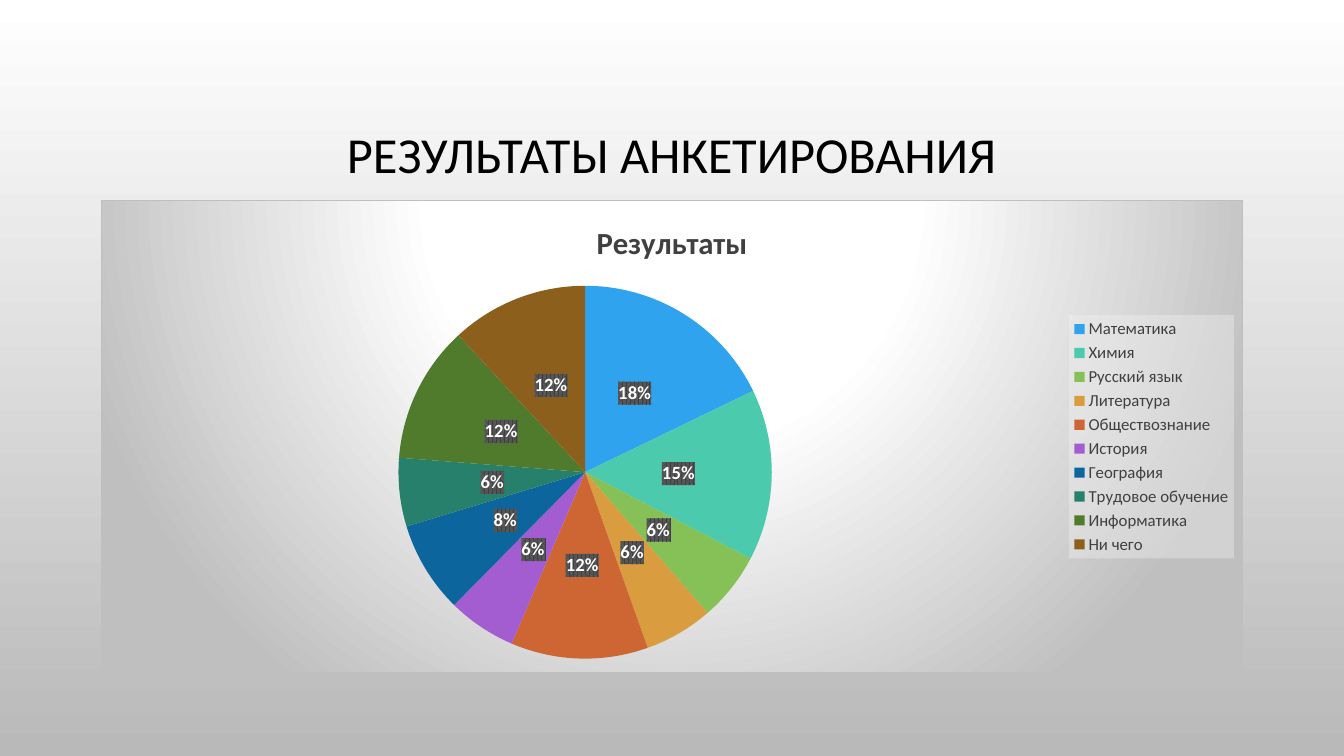
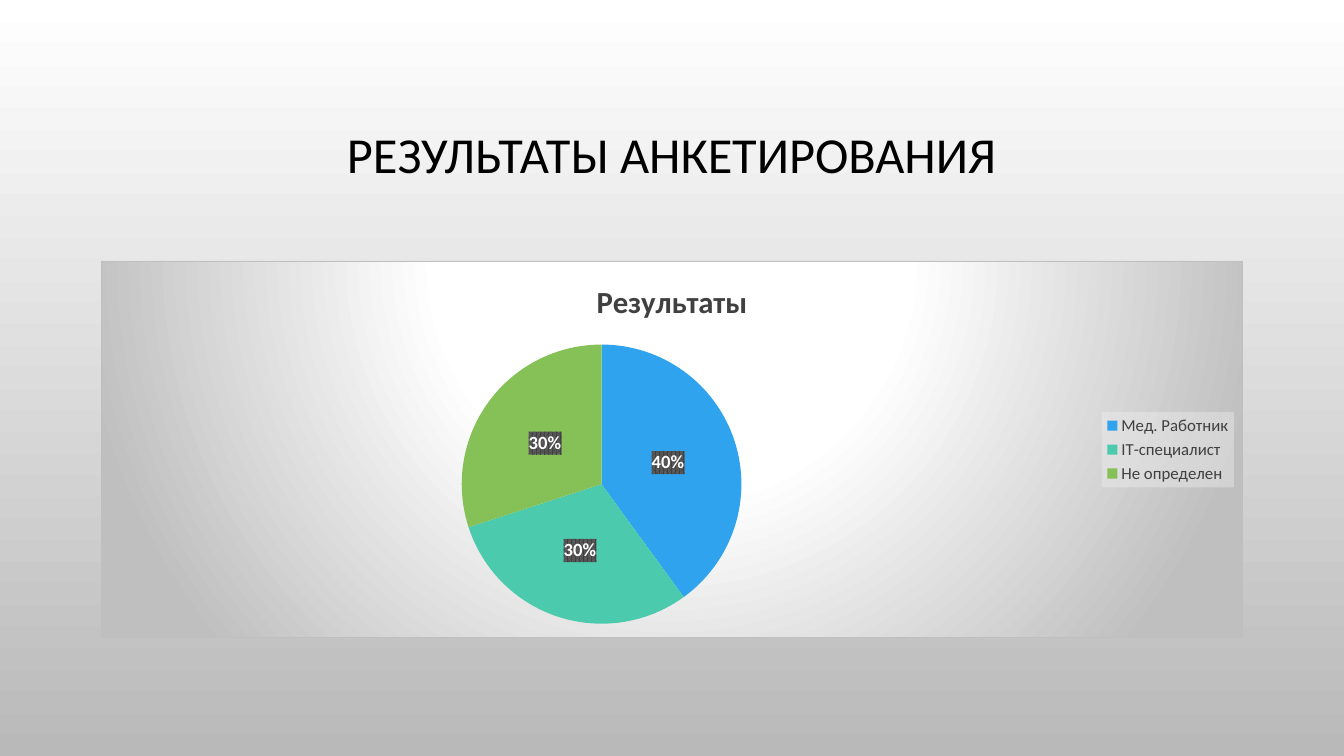
from pptx import Presentation
from pptx.chart.data import CategoryChartData
from pptx.dml.color import RGBColor
from pptx.enum.chart import XL_CHART_TYPE, XL_LABEL_POSITION, XL_LEGEND_POSITION
from pptx.enum.text import MSO_ANCHOR, PP_ALIGN
from pptx.oxml import parse_xml
from pptx.oxml.ns import nsdecls, qn
from pptx.util import Cm, Pt

PIE = XL_CHART_TYPE.PIE
LABEL_CENTER = XL_LABEL_POSITION.CENTER
LEGEND_RIGHT = XL_LEGEND_POSITION.RIGHT
MIDDLE = MSO_ANCHOR.MIDDLE
CENTER = PP_ALIGN.CENTER

# Shared style
FONT = "Calibri"
BLACK, WHITE, DARK_GREY = "000000", "FFFFFF", "404040"
BACKGROUND_END = "B9B9B9"
SLICE_COLORS = ["2FA3EE", "4BCAAD", "86C157", "D99C3F", "CE6633",
                "A35DD1", "0D659E", "26806C", "507B2D", "8C601C"]
LEFT, WIDTH = 2.54, 28.78
TITLE_TOP, TITLE_HEIGHT = 1.73, 4.45

FORMATS = {
    "title": {"size": Pt(36), "color": BLACK},
    "chart": {"size": Pt(10), "color": BLACK},
    "chart_title": {"size": Pt(22), "color": DARK_GREY, "bold": True},
    "legend": {"size": Pt(12), "color": DARK_GREY},
    "label": {"size": Pt(13.3), "color": WHITE, "bold": True},
}

# Fills of the chart parts
PANEL_FILL = """
<a:gradFill><a:gsLst>
  <a:gs pos="0"><a:srgbClr val="FFFFFF"/></a:gs>
  <a:gs pos="39000"><a:srgbClr val="FFFFFF"/></a:gs>
  <a:gs pos="100000"><a:srgbClr val="BFBFBF"/></a:gs>
</a:gsLst><a:path path="circle">
  <a:fillToRect l="50000" t="-80000" r="50000" b="180000"/>
</a:path></a:gradFill>
<a:ln w="9525"><a:solidFill><a:srgbClr val="BFBFBF"/></a:solidFill></a:ln>"""
LEGEND_FILL = """
<a:solidFill><a:srgbClr val="F2F2F2"><a:alpha val="39000"/></a:srgbClr></a:solidFill>
<a:ln><a:noFill/></a:ln>"""
LABEL_FILL = """
<a:pattFill prst="pct75">
  <a:fgClr><a:srgbClr val="404040"/></a:fgClr>
  <a:bgClr><a:srgbClr val="595959"/></a:bgClr>
</a:pattFill><a:ln><a:noFill/></a:ln>"""


def rgb(color):
    return RGBColor.from_string(color)


def set_font(font, style):
    font.name = FONT
    for name, value in FORMATS[style].items():
        if name == "color":
            font.color.rgb = rgb(value)
        else:
            setattr(font, name, value)


def fill_chart_part(part, fill):
    """Put shape properties right before the text properties of a chart part."""
    properties = parse_xml(f'<c:spPr {nsdecls("c", "a")}>{fill}</c:spPr>')
    part.find(qn("c:txPr")).addprevious(properties)


class Deck:
    def __init__(self):
        self.presentation = Presentation()
        self.presentation.slide_width = Cm(33.87)
        self.presentation.slide_height = Cm(19.05)
        self.slide = None

    def add_slide(self, title):
        self.slide = self.presentation.slides.add_slide(
            self.presentation.slide_layouts[6])
        fill = self.slide.background.fill
        fill.gradient()
        fill.gradient_angle = 270
        for stop, position, color in zip(
                fill.gradient_stops, (0, 1), (WHITE, BACKGROUND_END)):
            stop.position = position
            stop.color.rgb = rgb(color)
        self.add_title(title)

    def add_title(self, text):
        shape = self.slide.shapes.add_textbox(
            Cm(LEFT), Cm(TITLE_TOP), Cm(WIDTH), Cm(TITLE_HEIGHT))
        frame = shape.text_frame
        frame.word_wrap = True
        frame.vertical_anchor = MIDDLE
        paragraph = frame.paragraphs[0]
        paragraph.alignment = CENTER
        paragraph.line_spacing = 0.9
        run = paragraph.add_run()
        run.text = text
        set_font(run.font, "title")

    def add_pie(self, title, results, top, height):
        data = CategoryChartData()
        data.categories = list(results)
        data.add_series(title, list(results.values()))
        chart = self.slide.shapes.add_chart(
            PIE, Cm(LEFT), Cm(top), Cm(WIDTH), Cm(height), data).chart
        set_font(chart.font, "chart")

        # Heading
        chart.has_title = True
        heading = chart.chart_title
        heading.include_in_layout = False
        run = heading.text_frame.paragraphs[0].add_run()
        run.text = title
        set_font(run.font, "chart_title")

        # Legend
        chart.has_legend = True
        chart.legend.position = LEGEND_RIGHT
        chart.legend.include_in_layout = False
        set_font(chart.legend.font, "legend")

        # Slices and their labels
        plot = chart.plots[0]
        plot.vary_by_categories = True
        for index, color in enumerate(SLICE_COLORS[:len(results)]):
            fill = plot.series[0].points[index].format.fill
            fill.solid()
            fill.fore_color.rgb = rgb(color)
        plot.has_data_labels = True
        labels = plot.data_labels
        settings = {"show_percentage": True, "show_value": False,
                    "number_format": "0%", "number_format_is_linked": False,
                    "position": LABEL_CENTER}
        for name, value in settings.items():
            setattr(labels, name, value)
        set_font(labels.font, "label")

        # Panel, legend and label backgrounds
        fill_chart_part(chart.element, PANEL_FILL)
        fill_chart_part(chart.element.xpath(".//c:legend")[0], LEGEND_FILL)
        fill_chart_part(chart.element.xpath(".//c:dLbls")[0], LABEL_FILL)
        chart.element.find(qn("c:chart")).addprevious(
            parse_xml(f'<c:roundedCorners {nsdecls("c")} val="0"/>'))


SUBJECTS = {
    "Математика": 18, "Химия": 15, "Русский язык": 6, "Литература": 6,
    "Обществознание": 12, "История": 6, "География": 8,
    "Трудовое обучение": 6, "Информатика": 12, "Ни чего": 12,
}
PROFESSIONS = {"Мед. Работник": 40, "IT-специалист": 30, "Не определен": 30}


def main():
    deck = Deck()
    for results, top, height in ((SUBJECTS, 5.05, 11.91), (PROFESSIONS, 6.58, 9.5)):
        deck.add_slide("РЕЗУЛЬТАТЫ АНКЕТИРОВАНИЯ")
        deck.add_pie("Результаты", results, top, height)
    deck.presentation.save("out.pptx")


if __name__ == "__main__":
    main()
